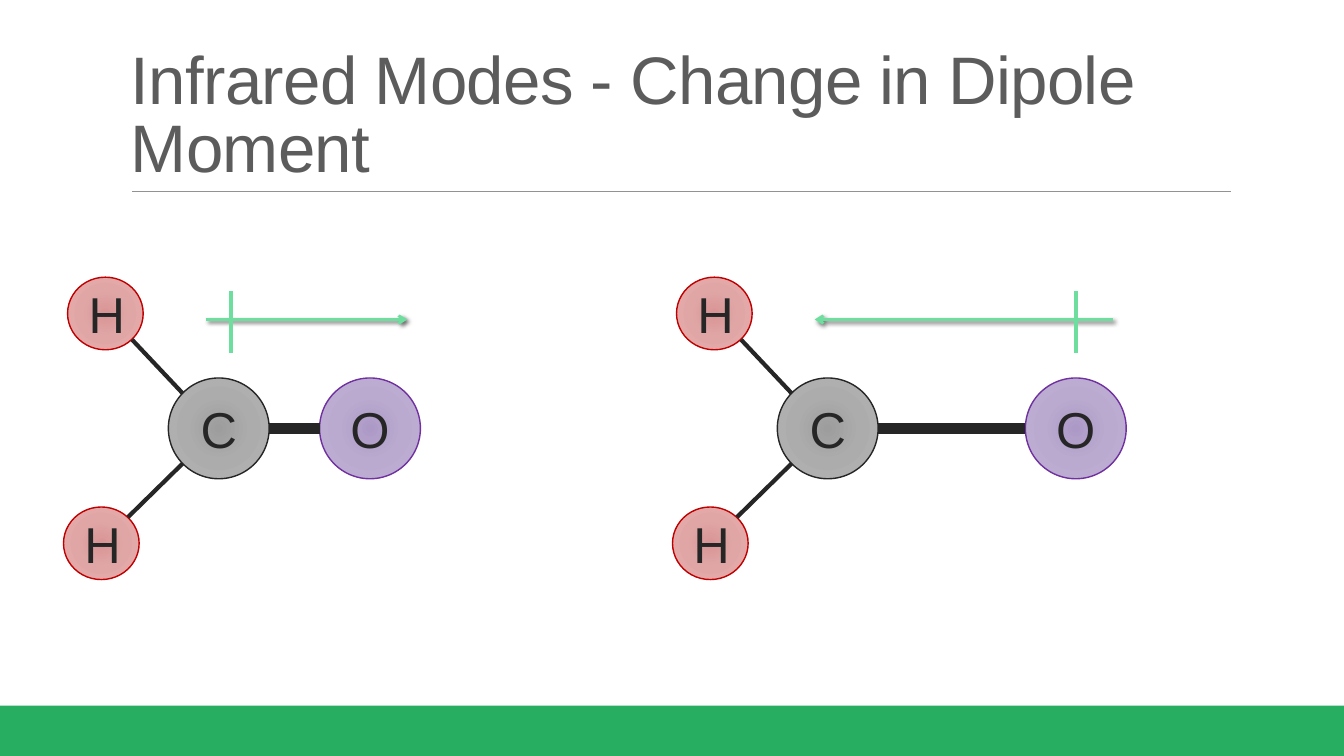
from lxml import etree
from pptx import Presentation
from pptx.dml.color import RGBColor
from pptx.enum import shapes, text
from pptx.oxml import parse_xml
from pptx.oxml.ns import nsdecls, qn
from pptx.util import Inches, Pt

FONT = "Arial"
HUES = {"band": "27AE61", "rule": "929292", "title": "5C5C5C",
        "ink": "262626", "dipole": "6DDE9E"}
# Per element: size, outline, gradient from the centre outwards
ATOMS = {
    "C": (1, 1, "262626", ("9D9D9D", "ACACAC", "B5B5B5")),
    "O": (1, 1, "7030A0", ("AD99C6", "BAAACF", "C1B1D7")),
    "H": (0.75, 0.72, "C00000", ("D99494", "E0A6A6", "E8ACAC")),
}
SHADOW = f"""<a:effectLst {nsdecls('a')}>
  <a:outerShdw blurRad="38100" dist="25400" dir="2700000">
    <a:srgbClr val="000000"><a:alpha val="60000"/></a:srgbClr>
  </a:outerShdw></a:effectLst>"""


def add_line(home, x1, y1, x2, y2, hue, width, arrow=False):
    """Draw a straight line; an arrow gets a head and a shadow."""
    line = home.add_connector(shapes.MSO_CONNECTOR.STRAIGHT, Inches(x1),
                              Inches(y1), Inches(x2), Inches(y2))
    line.line.color.rgb = RGBColor.from_string(HUES[hue])
    line.line.width = Pt(width)
    props = line._element.spPr
    if arrow:
        etree.SubElement(props.find(qn("a:ln")), qn("a:tailEnd"), type="arrow")
        props.append(parse_xml(SHADOW))
    else:
        etree.SubElement(props, qn("a:effectLst"))


def add_atom(name, x, y):
    wide, high, edge, tones = ATOMS[name]
    atom = slide.shapes.add_shape(shapes.MSO_SHAPE.OVAL, Inches(x), Inches(y),
                                  Inches(wide), Inches(high))
    atom.shadow.inherit = False
    atom.line.color.rgb = RGBColor.from_string(edge)
    atom.line.width = Pt(1)
    stops = "".join(f'<a:gs pos="{pos}000"><a:srgbClr val="{tone}"/></a:gs>'
                    for pos, tone in zip((0, 45, 100), tones))
    atom.fill.background()
    props = atom._element.spPr
    props.replace(props.find(qn("a:noFill")), parse_xml(
        f'<a:gradFill {nsdecls("a")}><a:gsLst>{stops}</a:gsLst>'
        '<a:path path="circle"><a:fillToRect l="100000" t="100000" '
        'r="100000" b="100000"/></a:path></a:gradFill>'))
    frame = atom.text_frame
    frame.vertical_anchor = text.MSO_ANCHOR.MIDDLE
    para = frame.paragraphs[0]
    para.text = name
    para.alignment = text.PP_ALIGN.CENTER
    para.font.name = FONT
    para.font.size = Pt(36)
    para.font.color.rgb = RGBColor.from_string(HUES["ink"])


deck = Presentation()
deck.slide_width, deck.slide_height = Inches(13.33), Inches(7.5)
slide = deck.slides.add_slide(deck.slide_layouts[6])

band = slide.shapes.add_shape(shapes.MSO_SHAPE.RECTANGLE, 0, Inches(7),
                              deck.slide_width, Inches(0.5))
band.shadow.inherit = False
band.fill.solid()
band.fill.fore_color.rgb = RGBColor.from_string(HUES["band"])
band.line.fill.background()
add_line(slide.shapes, 1.31, 1.9, 12.21, 1.9, "rule", 0.5)

title = slide.shapes.add_textbox(Inches(1.2), Inches(0.31), Inches(11), Inches(1.59))
frame = title.text_frame
frame.word_wrap = True
frame.vertical_anchor = text.MSO_ANCHOR.BOTTOM
para = frame.paragraphs[0]
para.line_spacing = 0.85
run = para.add_run()
run.text = "Infrared Modes - Change in Dipole Moment"
run.font.name = FONT
run.font.size = Pt(48)
run.font.color.rgb = RGBColor.from_string(HUES["title"])
run._r.get_or_add_rPr().set("spc", "-50")

# Per molecule: left of C, left of O, dipole start, dipole end, cross bar
for left, far, start, end, bar in ((1.67, 3.17, 2.04, 4.04, 2.29),
                                   (7.71, 10.17, 11.04, 8.08, 10.67)):
    add_atom("C", left, 3.75)
    add_atom("O", far, 3.75)
    add_atom("H", left - 1.04, 5.03)
    add_atom("H", left - 1, 2.75)
    add_line(slide.shapes, left - 0.36, 3.37, left + 0.14, 3.9, "ink", 3)
    add_line(slide.shapes, left + 0.14, 4.6, left - 0.4, 5.13, "ink", 3)
    add_line(slide.shapes, left + 1, 4.25, far, 4.25, "ink", 8.25)
    dipole = slide.shapes.add_group_shape().shapes
    add_line(dipole, start, 3.17, end, 3.17, "dipole", 2, arrow=True)
    add_line(dipole, bar, 2.89, bar, 3.5, "dipole", 2.75)

deck.save("out.pptx")
